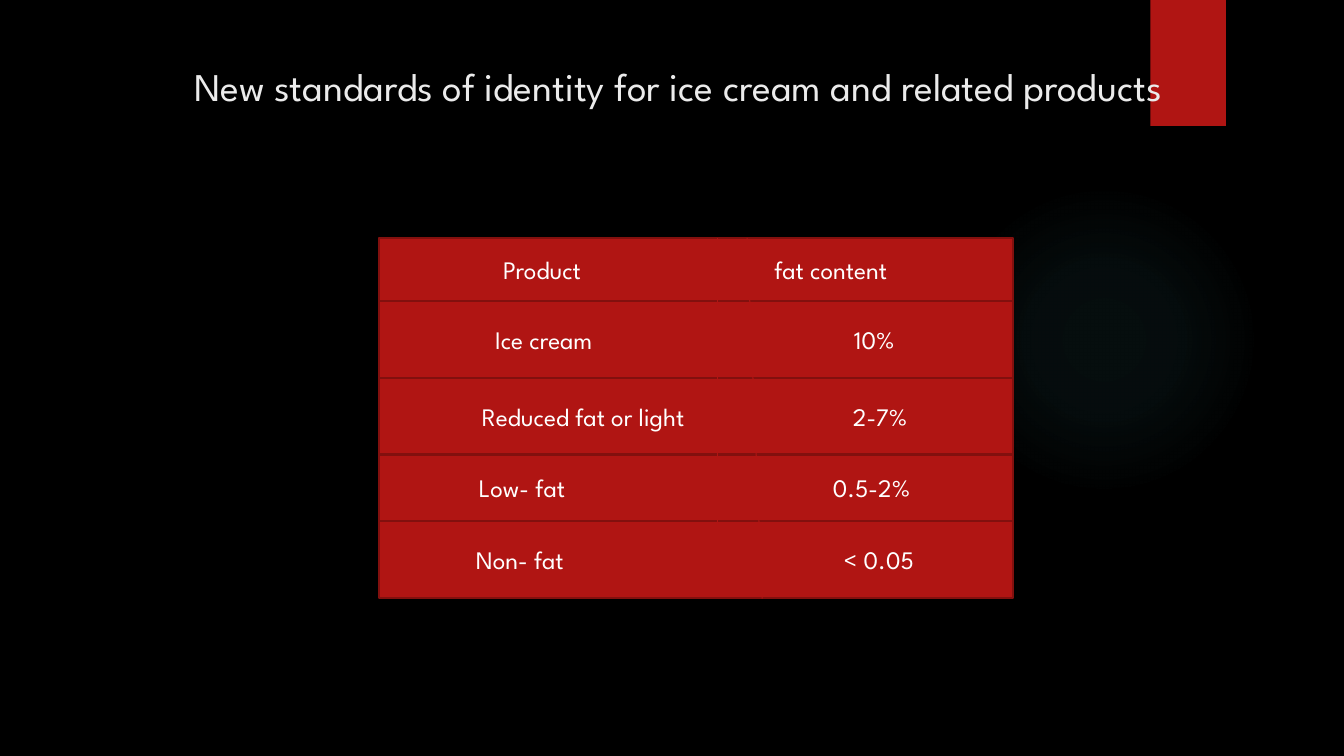
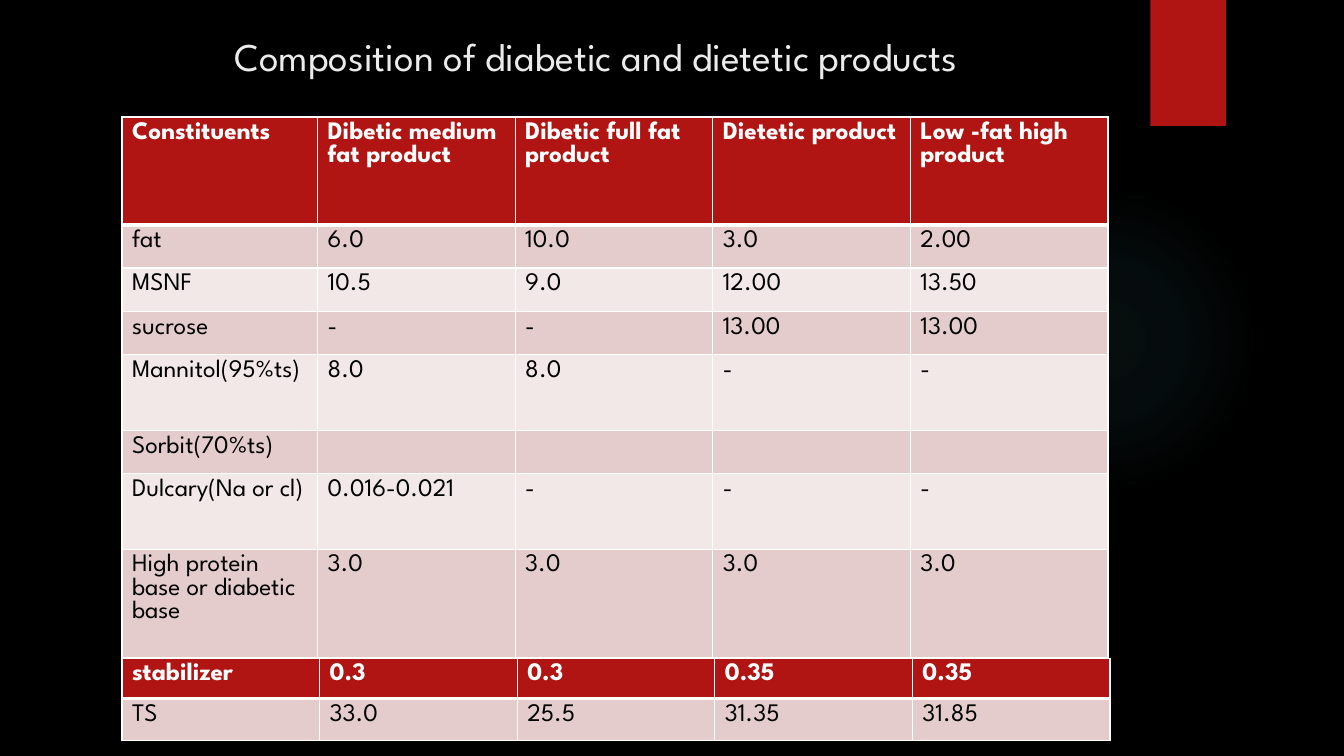
from dataclasses import dataclass

import pptx
import pptx.dml.color
import pptx.enum.shapes
import pptx.enum.text
import pptx.oxml
import pptx.oxml.ns
import pptx.util
from lxml import etree
from pptx.util import Inches

SHAPE = pptx.enum.shapes.MSO_SHAPE
ALIGN = pptx.enum.text.PP_ALIGN
MIDDLE = pptx.enum.text.MSO_ANCHOR.MIDDLE
qn = pptx.oxml.ns.qn


@dataclass(frozen=True)
class Theme:
    font: str = "League Spartan"
    background: str = "000000"
    accent: str = "B01513"
    outline: str = "82100E"
    glow: str = "50B9C1"
    title: str = "EBEBEB"
    light: str = "FFFFFF"
    dark: str = "000000"
    bands: tuple = ("E4CCCC", "F2E8E7")
    title_size: int = 28
    body_size: int = 18


def color(value):
    return pptx.dml.color.RGBColor.from_string(value)


class Deck:
    def __init__(self, theme):
        self.theme = theme
        self.presentation = pptx.Presentation()
        self.presentation.slide_width = Inches(13.33)
        self.presentation.slide_height = Inches(7.5)
        self.slide = None

    def new_slide(self):
        self.slide = self.presentation.slides.add_slide(self.presentation.slide_layouts[6])
        fill = self.slide.background.fill
        fill.solid()
        fill.fore_color.rgb = color(self.theme.background)
        self.glow(9.41, 1.83, 3.08)
        self.rectangle(11.41, 0, 0.75, 1.25)

    def glow(self, left, top, diameter):
        shape = self.slide.shapes.add_shape(
            SHAPE.OVAL, Inches(left), Inches(top), Inches(diameter), Inches(diameter))
        shape.shadow.inherit = False
        shape.line.fill.background()
        stops = "".join(
            f'<a:gs pos="{position * 1000}"><a:srgbClr val="{self.theme.glow}">'
            f'<a:alpha val="{alpha * 1000}"/></a:srgbClr></a:gs>'
            for position, alpha in ((0, 7), (36, 6), (69, 0), (100, 0)))
        gradient = pptx.oxml.parse_xml(
            f'<a:gradFill {pptx.oxml.ns.nsdecls("a")} rotWithShape="1"><a:gsLst>{stops}</a:gsLst>'
            '<a:path path="circle"><a:fillToRect l="50000" t="50000" r="50000" b="50000"/></a:path>'
            '</a:gradFill>')
        shape._element.spPr.find(qn("a:prstGeom")).addnext(gradient)

    def rectangle(self, left, top, width, height, outline=None):
        shape = self.slide.shapes.add_shape(
            SHAPE.RECTANGLE, Inches(left), Inches(top), Inches(width), Inches(height))
        shape.shadow.inherit = False
        shape.fill.solid()
        shape.fill.fore_color.rgb = color(self.theme.accent)
        if outline:
            shape.line.color.rgb = color(outline)
            shape.line.width = pptx.util.Pt(1.5)
        else:
            shape.line.fill.background()
        return shape

    def add_run(self, paragraph, text, size, ink, bold=False):
        run = paragraph.add_run()
        run.text = text
        run.font.name = self.theme.font
        run.font.size = pptx.util.Pt(size)
        run.font.color.rgb = color(ink)
        run.font.bold = bold

    def title(self, text, left, top, width):
        box = self.slide.shapes.add_textbox(
            Inches(left), Inches(top), Inches(width), Inches(0.7))
        frame = box.text_frame
        frame.word_wrap = True
        frame.vertical_anchor = MIDDLE
        paragraph = frame.paragraphs[0]
        paragraph.alignment = ALIGN.CENTER
        self.add_run(paragraph, text, self.theme.title_size, self.theme.title)

    def tabbed_bar(self, left, top, width, height, product, product_left, value, value_left):
        shape = self.rectangle(left, top, width, height, self.theme.outline)
        frame = shape.text_frame
        frame.word_wrap = True
        frame.vertical_anchor = MIDDLE
        frame.margin_left = Inches(product_left - left)
        paragraph = frame.paragraphs[0]
        paragraph.alignment = ALIGN.LEFT
        tabs = etree.SubElement(paragraph._p.get_or_add_pPr(), qn("a:tabLst"))
        position = Inches(value_left - product_left)
        etree.SubElement(tabs, qn("a:tab"), pos=str(position), algn="l")
        self.add_run(paragraph, f"{product}\t{value}", self.theme.body_size, self.theme.light)

    def line(self, start, end):
        connector = self.slide.shapes.add_connector(
            pptx.enum.shapes.MSO_CONNECTOR.STRAIGHT, *map(Inches, start + end))
        connector.line.color.rgb = color(self.theme.accent)
        connector.line.width = pptx.util.Pt(0.75)
        etree.SubElement(connector._element.spPr, qn("a:effectLst"))

    def cell_borders(self, cell, bottom):
        properties = cell._tc.get_or_add_tcPr()
        sides = (("lnL", 1), ("lnR", 1), ("lnT", 1), ("lnB", bottom))
        for index, (side, width) in enumerate(sides):
            border = etree.Element(qn(f"a:{side}"), w=str(pptx.util.Pt(width)))
            fill = etree.SubElement(border, qn("a:solidFill"))
            etree.SubElement(fill, qn("a:srgbClr"), val=self.theme.light)
            properties.insert(index, border)

    def table(self, left, top, widths, heights, rows):
        table = self.slide.shapes.add_table(
            len(rows), len(widths), Inches(left), Inches(top),
            Inches(sum(widths)), Inches(sum(heights))).table
        table.first_row = True
        table.horz_banding = False
        for column, width in zip(table.columns, widths):
            column.width = Inches(width)
        for index, (height, texts) in enumerate(zip(heights, rows)):
            table.rows[index].height = Inches(height)
            header = index == 0
            background = self.theme.accent if header else self.theme.bands[(index - 1) % 2]
            ink = self.theme.light if header else self.theme.dark
            for column, text in enumerate(texts):
                cell = table.cell(index, column)
                cell.fill.solid()
                cell.fill.fore_color.rgb = color(background)
                self.cell_borders(cell, 3 if header else 1)
                if text:
                    paragraph = cell.text_frame.paragraphs[0]
                    self.add_run(paragraph, text, self.theme.body_size, ink, header)


def fat_standards(deck):
    deck.new_slide()
    deck.title("New standards of identity for ice cream and related products", 0.71, 0.5, 12.03)
    top = 2.36
    for height, *texts in (
        (0.63, "Product", 4.99, "fat content", 7.68),
        (0.76, "Ice cream", 4.91, "10%", 8.47),
        (0.76, "Reduced fat or light", 4.78, "2-7%", 8.46),
        (0.66, "Low- fat", 4.75, "0.5-2%", 8.26),
        (0.76, "Non- fat", 4.72, "< 0.05", 8.37),
    ):
        deck.tabbed_bar(3.76, top, 6.29, height, *texts)
        top += height
    deck.line((7.41, 2.36), (7.56, 5.94))
    deck.line((7.12, 2.36), (7.12, 5.84))


def product_composition(deck):
    deck.new_slide()
    deck.title("Composition of diabetic and dietetic products", 0.71, 0.2, 10.4)
    deck.table(1.21, 1.16, [1.94] + [1.96] * 4, [1.07, 0.43, 0.43, 0.43, 0.75, 0.43, 0.75, 1.07], [
        ("Constituents", "Dibetic medium fat product", "Dibetic full fat product",
         "Dietetic product", "Low -fat high product"),
        ("fat", "6.0", "10.0", "3.0", "2.00"),
        ("MSNF", "10.5", "9.0", "12.00", "13.50"),
        ("sucrose", "-", "-", "13.00", "13.00"),
        ("Mannitol(95%ts)", "8.0", "8.0", "-", "-"),
        ("Sorbit(70%ts)", "", "", "", ""),
        ("Dulcary(Na or cl)", "0.016-0.021", "-", "-", "-"),
        ("High protein base or diabetic base", "3.0", "3.0", "3.0", "3.0"),
    ])
    deck.table(1.21, 6.53, [1.96] * 5, [0.33, 0.42], [
        ("stabilizer", "0.3", "0.3", "0.35", "0.35"),
        ("TS", "33.0", "25.5", "31.35", "31.85"),
    ])


def main():
    deck = Deck(Theme())
    fat_standards(deck)
    product_composition(deck)
    deck.presentation.save("out.pptx")


if __name__ == "__main__":
    main()
